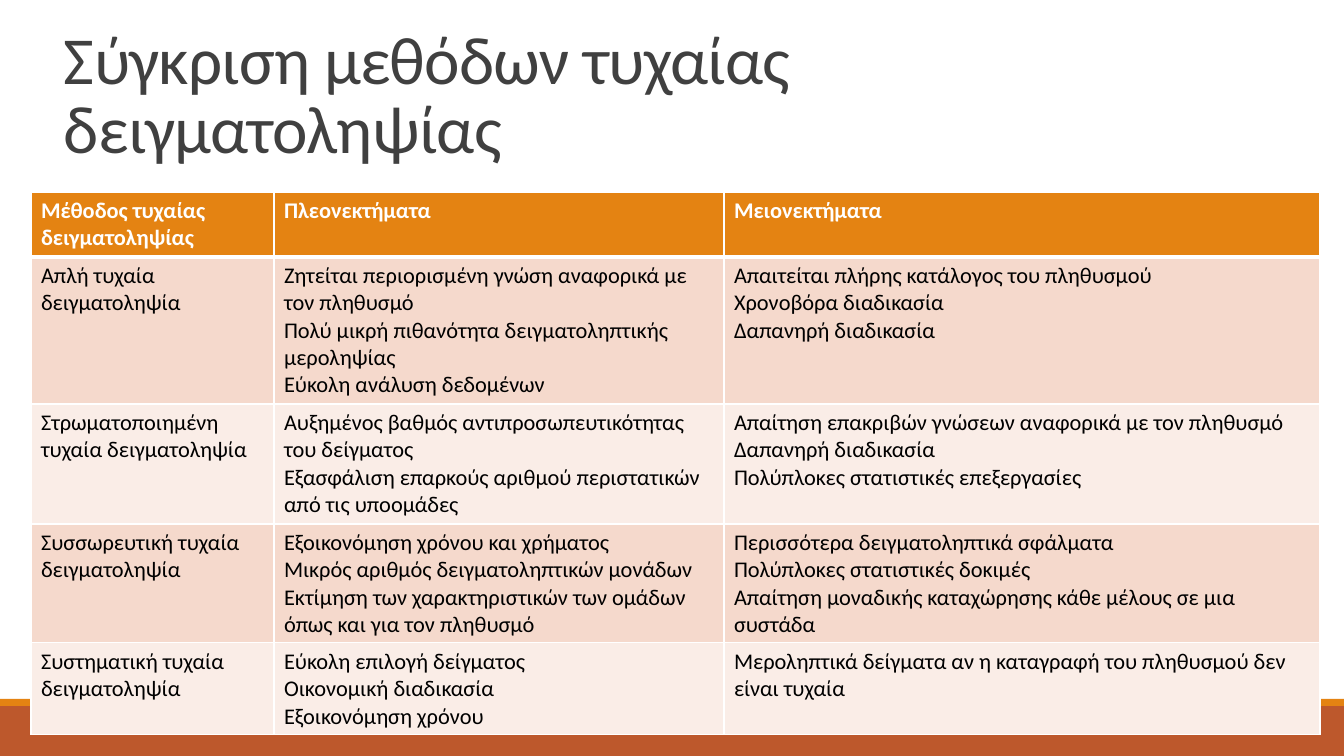
import pptx
import pptx.dml.color
import pptx.enum.shapes
import pptx.enum.text
import pptx.oxml
import pptx.oxml.ns
import pptx.util

RGB = pptx.dml.color.RGBColor
ORANGE = RGB(0xE4, 0x83, 0x12)
RUST = RGB(0xBD, 0x58, 0x2C)
BAND_DARK = RGB(0xF5, 0xD9, 0xCC)
BAND_LIGHT = RGB(0xFA, 0xED, 0xE7)
GREY = RGB(0x40, 0x40, 0x40)
WHITE = RGB(0xFF, 0xFF, 0xFF)
BLACK = RGB(0, 0, 0)
FONT = "Calibri"

# Content: each cell is a list of paragraphs joined by newlines
TITLE = "Σύγκριση μεθόδων τυχαίας δειγματοληψίας"
ROWS = [
    ("Μέθοδος τυχαίας δειγματοληψίας", "Πλεονεκτήματα", "Μειονεκτήματα"),
    ("Απλή τυχαία δειγματοληψία",
     "Ζητείται περιορισμένη γνώση αναφορικά με τον πληθυσμό\n"
     "Πολύ μικρή πιθανότητα δειγματοληπτικής μεροληψίας\n"
     "Εύκολη ανάλυση δεδομένων",
     "Απαιτείται πλήρης κατάλογος του πληθυσμού\n"
     "Χρονοβόρα διαδικασία\n"
     "Δαπανηρή διαδικασία"),
    ("Στρωματοποιημένη τυχαία δειγματοληψία",
     "Αυξημένος βαθμός αντιπροσωπευτικότητας του δείγματος\n"
     "Εξασφάλιση επαρκούς αριθμού περιστατικών από τις υποομάδες",
     "Απαίτηση επακριβών γνώσεων αναφορικά με τον πληθυσμό\n"
     "Δαπανηρή διαδικασία\n"
     "Πολύπλοκες στατιστικές επεξεργασίες"),
    ("Συσσωρευτική τυχαία δειγματοληψία",
     "Εξοικονόμηση χρόνου και χρήματος\n"
     "Μικρός αριθμός δειγματοληπτικών μονάδων\n"
     "Εκτίμηση των χαρακτηριστικών των ομάδων όπως και για τον πληθυσμό",
     "Περισσότερα δειγματοληπτικά σφάλματα\n"
     "Πολύπλοκες στατιστικές δοκιμές\n"
     "Απαίτηση μοναδικής καταχώρησης κάθε μέλους σε μια συστάδα"),
    ("Συστηματική τυχαία δειγματοληψία",
     "Εύκολη επιλογή δείγματος\n"
     "Οικονομική διαδικασία\n"
     "Εξοικονόμηση χρόνου",
     "Μεροληπτικά δείγματα αν η καταγραφή του πληθυσμού δεν είναι τυχαία"),
]
COLUMN_WIDTHS = [243, 450, 596]
ROW_HEIGHTS = [65, 147, 120, 119, 92]
FOOTER_BARS = [(706, 50, RUST), (699, 7, ORANGE)]  # top, height, colour
SLIDE_W, SLIDE_H = 1344, 756


def px(n):
    return pptx.util.Emu(round(n * 914400 / 100.8))


def style_run(r, size, color, bold=False):
    r.font.name = FONT
    r.font.size = pptx.util.Pt(size)
    r.font.color.rgb = color
    r.font.bold = bold


def add_borders(cell, is_header):
    tcPr = cell._tc.get_or_add_tcPr()
    for i, side in enumerate("LRTB"):
        points = 3 if is_header and side == "B" else 1
        tcPr.insert(i, pptx.oxml.parse_xml(
            f'<a:ln{side} {pptx.oxml.ns.nsdecls("a")} w="{points * 12700}">'
            f'<a:solidFill><a:srgbClr val="{WHITE}"/></a:solidFill></a:ln{side}>'))


prs = pptx.Presentation()
prs.slide_width, prs.slide_height = px(SLIDE_W), px(SLIDE_H)
s = prs.slides.add_slide(prs.slide_layouts[6])

# Footer bars
for top, height, color in FOOTER_BARS:
    bar = s.shapes.add_shape(pptx.enum.shapes.MSO_SHAPE.RECTANGLE,
                             0, px(top), px(SLIDE_W), px(height))
    bar.shadow.inherit = False
    bar.fill.solid()
    bar.fill.fore_color.rgb = color
    bar.line.fill.background()

# Title
tf = s.shapes.add_textbox(px(54), px(12), px(1192), px(160)).text_frame
tf.word_wrap = True
tf.vertical_anchor = pptx.enum.text.MSO_ANCHOR.BOTTOM
tf.text = TITLE
p = tf.paragraphs[0]
p.line_spacing = 0.85
style_run(p.runs[0], 48, GREY)
p.runs[0]._r.get_or_add_rPr().set("spc", "-50")

# Comparison table
table = s.shapes.add_table(len(ROWS), len(COLUMN_WIDTHS), px(31), px(192),
                           px(sum(COLUMN_WIDTHS)), px(sum(ROW_HEIGHTS))).table
for column, width in zip(table.columns, COLUMN_WIDTHS):
    column.width = px(width)
for i, (texts, height) in enumerate(zip(ROWS, ROW_HEIGHTS)):
    table.rows[i].height = px(height)
    is_header = i == 0
    fill = ORANGE if is_header else BAND_DARK if i % 2 else BAND_LIGHT
    for j, text in enumerate(texts):
        cell = table.cell(i, j)
        cell.text_frame.text = text
        cell.fill.solid()
        cell.fill.fore_color.rgb = fill
        add_borders(cell, is_header)
        for p in cell.text_frame.paragraphs:
            style_run(p.runs[0], 16, WHITE if is_header else BLACK, is_header)

prs.save("out.pptx")
